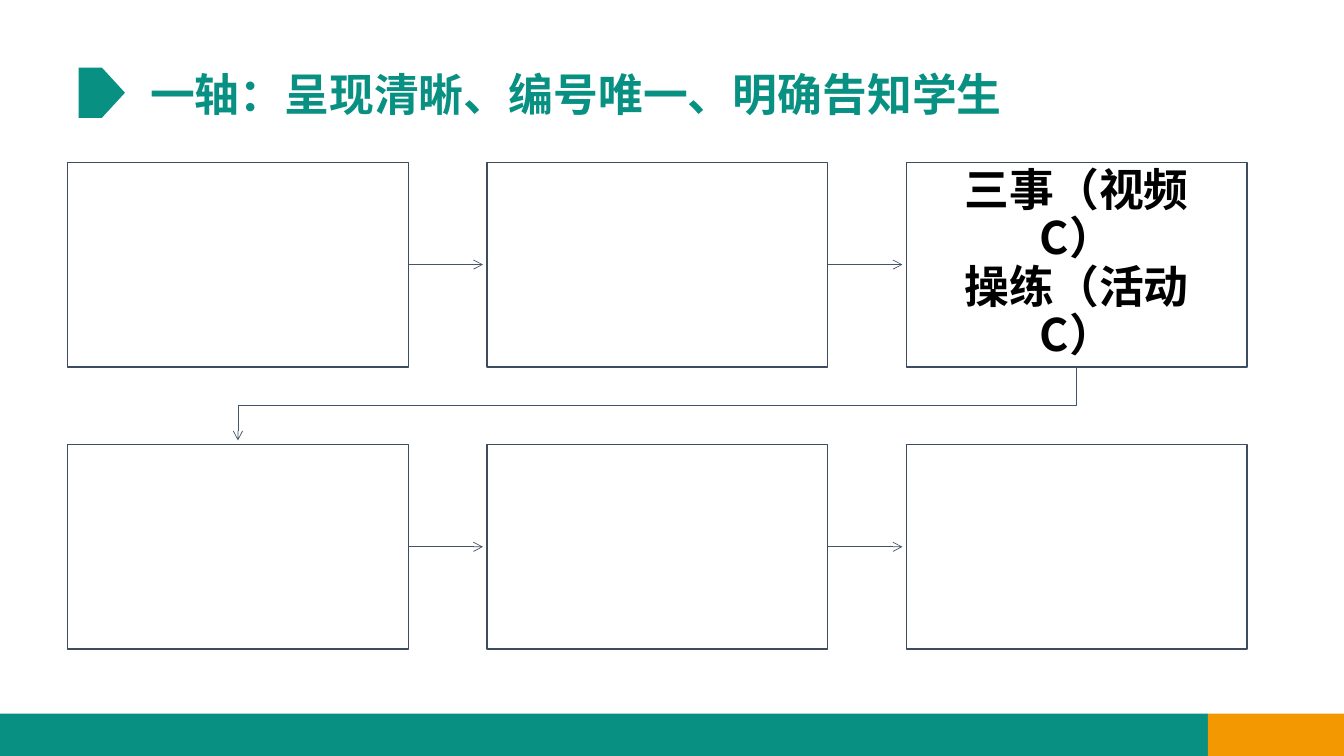
from pptx import Presentation
from pptx.dml.color import RGBColor
from pptx.enum.shapes import MSO_CONNECTOR as LINK, MSO_SHAPE as SHAPE
from pptx.enum.text import MSO_ANCHOR as ANCHOR, PP_ALIGN as ALIGN
from pptx.oxml.ns import qn
from pptx.util import Inches, Pt
from lxml.etree import SubElement

COLORS = {"teal": "089082", "orange": "F39800", "white": "FFFFFF",
          "edge": "3E4C60", "arrow": "44546A", "black": "000000"}
FONT = "Noto Sans CJK SC"

# Grid of step boxes
LEFT, TOP, WIDE, HIGH = 0.67, 1.61, 3.38, 2.03
STEP_X, STEP_Y, GAP = 4.16, 2.8, 0.04
ROWS, COLS = 2, 3


def tint(name):
    return RGBColor.from_string(COLORS[name])


def add_block(slide, kind, area, fill, edge=None):
    block = slide.shapes.add_shape(kind, *map(Inches, area))
    block.shadow.inherit = False
    block.fill.solid()
    block.fill.fore_color.rgb = tint(fill)
    if edge:
        block.line.color.rgb = tint(edge)
        block.line.width = Pt(1)
    else:
        block.line.fill.background()
    return block


def write(frame, text, color, align):
    frame.word_wrap = True
    para = frame.paragraphs[0]
    para.text = text
    for key, value in {"alignment": align, "line_spacing": 0.9}.items():
        setattr(para, key, value)
    for run in para.runs:
        for key, value in {"name": FONT, "size": Pt(32), "bold": True}.items():
            setattr(run.font, key, value)
        run.font.color.rgb = tint(color)
        SubElement(run.font._element, qn("a:ea"), typeface=FONT)


def add_label(block, text):
    frame = block.text_frame
    for side in ("left", "top", "right", "bottom"):
        setattr(frame, f"margin_{side}", Inches(0.25))
    frame.vertical_anchor = ANCHOR.MIDDLE
    write(frame, text, "black", ALIGN.CENTER)


def style_arrow(arrow):
    arrow.line.color.rgb = tint("arrow")
    arrow.line.width = Pt(0.5)
    SubElement(arrow.line._get_or_add_ln(), qn("a:tailEnd"), type="arrow")


def add_arrow(slide, start, end, y):
    arrow = slide.shapes.add_connector(LINK.STRAIGHT, *map(Inches, (start, y, end, y)))
    style_arrow(arrow)
    SubElement(arrow._element.spPr, qn("a:effectLst"))


def add_bend(slide, points):
    first, *rest = [(Inches(x), Inches(y)) for x, y in points]
    path = slide.shapes.build_freeform(*first)
    path.add_line_segments(rest, close=False)
    bend = path.convert_to_shape()
    bend.shadow.inherit = False
    bend.fill.background()
    style_arrow(bend)


def main():
    prs = Presentation()
    prs.slide_width, prs.slide_height = Inches(13.33), Inches(7.5)
    slide = prs.slides.add_slide(prs.slide_layouts[6])

    # Title marker and footer bars
    add_block(slide, SHAPE.PENTAGON, (0.78, 0.67, 0.46, 0.5), "teal")
    add_block(slide, SHAPE.RECTANGLE, (0, 7.08, 11.98, 0.42), "teal")
    add_block(slide, SHAPE.RECTANGLE, (11.98, 7.08, 1.35, 0.42), "orange")

    # Title
    title = slide.shapes.add_textbox(*map(Inches, (1.39, 0.67, 11.23, 0.59)))
    write(title.text_frame, "一轴：呈现清晰、编号唯一、明确告知学生", "teal", ALIGN.LEFT)

    # Step boxes, each row joined by arrows
    boxes = []
    for row in range(ROWS):
        for col in range(COLS):
            x, y = LEFT + col * STEP_X, TOP + row * STEP_Y
            boxes.append(add_block(slide, SHAPE.RECTANGLE, (x, y, WIDE, HIGH), "white", "edge"))
            if col < COLS - 1:
                add_arrow(slide, x + WIDE, x + STEP_X - GAP, y + HIGH / 2)

    # Current step
    add_label(boxes[COLS - 1], "三事（视频C）\v操练（活动C）")

    # Bend from the first row to the second
    near = LEFT + WIDE / 2
    far = near + (COLS - 1) * STEP_X
    base, goal = TOP + HIGH, TOP + STEP_Y
    mid = (base + goal) / 2
    add_bend(slide, [(far, base), (far, mid), (near, mid), (near, goal - GAP)])

    prs.save("out.pptx")


if __name__ == "__main__":
    main()
